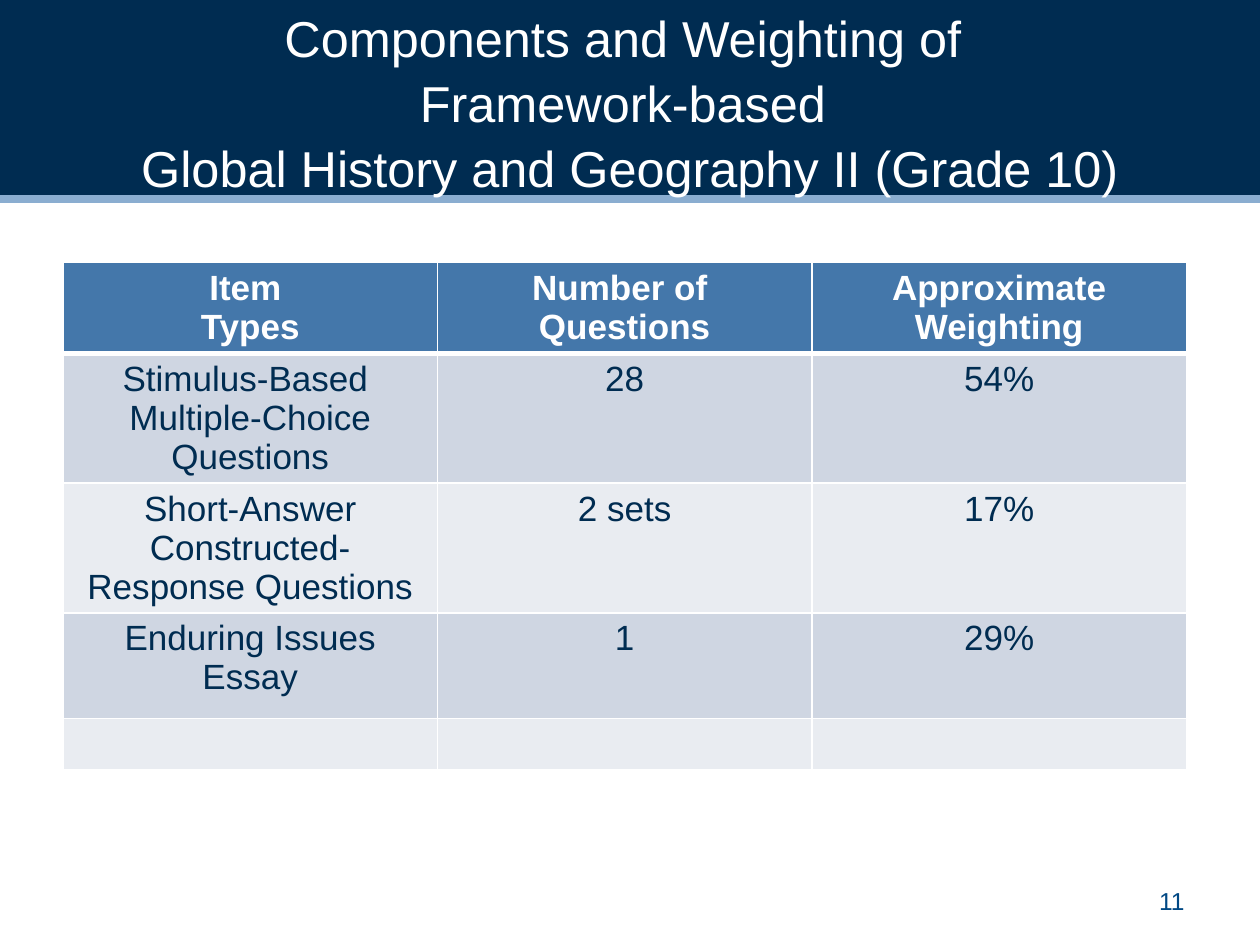
"""Build the slide on exam components and their weighting."""
import pptx
import pptx.dml.color
import pptx.enum.shapes
import pptx.enum.text
import pptx.oxml
import pptx.oxml.ns
import pptx.util

Pt = pptx.util.Pt
ALIGN = pptx.enum.text.PP_ALIGN
MIDDLE = pptx.enum.text.MSO_ANCHOR.MIDDLE


def color(value):
    return pptx.dml.color.RGBColor.from_string(value)


class SlideBuilder:
    font_name = "Arial"
    navy, white = "002C51", "FFFFFF"
    header_fill, row_fills = "4477AA", ("CFD6E2", "E9ECF1")

    def __init__(self, presentation):
        self.slide = presentation.slides.add_slide(presentation.slide_layouts[5])
        self.shapes = self.slide.shapes

    def style(self, paragraph, size, ink, align=ALIGN.CENTER, bold=False):
        paragraph.alignment = align
        font = paragraph.font
        font.name, font.size, font.bold = self.font_name, Pt(size), bold
        font.color.rgb = color(ink)

    def band(self, width, height):
        band = self.shapes.add_shape(
            pptx.enum.shapes.MSO_SHAPE.RECTANGLE, 0, 0, Pt(width), Pt(height))
        band.shadow.inherit = False
        band.fill.solid()
        band.fill.fore_color.rgb = color(self.navy)
        band.line.fill.background()

    def rule(self, y, width, ink, weight):
        rule = self.shapes.add_connector(
            pptx.enum.shapes.MSO_CONNECTOR.STRAIGHT, 0, Pt(y), Pt(width), Pt(y))
        rule.line.color.rgb = color(ink)
        rule.line.width = Pt(weight)
        rule.element.spPr.append(pptx.oxml.parse_xml(
            f"<a:effectLst {pptx.oxml.ns.nsdecls('a')}/>"))

    def title(self, text, left, top, width, height):
        title = self.shapes.title
        title.left, title.top = Pt(left), Pt(top)
        title.width, title.height = Pt(width), Pt(height)
        title.element.getparent().append(title.element)
        title.text_frame.vertical_anchor = MIDDLE
        title.text_frame.auto_size = pptx.enum.text.MSO_AUTO_SIZE.NONE
        heading = title.text_frame.paragraphs[0]
        heading.text = text
        heading.line_spacing = 1.07
        self.style(heading, 28.8, self.white)

    def borders(self, cell, weights):
        properties = cell._tc.get_or_add_tcPr()
        for side, weight in zip("LRTB", weights):
            properties.append(pptx.oxml.parse_xml(
                f'<a:ln{side} {pptx.oxml.ns.nsdecls("a")} w="{Pt(weight)}"><a:solidFill>'
                f'<a:srgbClr val="{self.white}"/></a:solidFill></a:ln{side}>'))

    def table(self, rows, left, top, column_width, row_heights):
        columns = len(rows[0])
        table = self.shapes.add_table(
            len(rows), columns, Pt(left), Pt(top),
            Pt(column_width * columns), Pt(sum(row_heights))).table
        for column in table.columns:
            column.width = Pt(column_width)
        for index, (entries, height) in enumerate(zip(rows, row_heights)):
            table.rows[index].height = Pt(height)
            is_header = index == 0
            fill = self.header_fill if is_header else self.row_fills[(index - 1) % 2]
            ink = self.white if is_header else self.navy
            weights = (1, 1, 3 if index == 1 else 1, 3 if is_header else 1)
            for cell, entry in zip(table.rows[index].cells, entries):
                self.borders(cell, weights)
                cell.fill.solid()
                cell.fill.fore_color.rgb = color(fill)
                if entry:
                    cell.text = entry
                    for paragraph in cell.text_frame.paragraphs:
                        self.style(paragraph, 20, ink, bold=is_header)

    def page_number(self, number, left, top, width, height):
        frame = self.shapes.add_textbox(
            Pt(left), Pt(top), Pt(width), Pt(height)).text_frame
        frame.word_wrap = True
        frame.vertical_anchor = MIDDLE
        frame.text = number
        self.style(frame.paragraphs[0], 14, "004884", ALIGN.RIGHT)


def main():
    presentation = pptx.Presentation()
    presentation.slide_width, presentation.slide_height = Pt(720), Pt(540)
    builder = SlideBuilder(presentation)
    builder.band(720, 113.8)
    builder.rule(113.8, 720, "8AADD0", 4.5)
    builder.title(
        "Components and Weighting of \nFramework-based \n"
        "Global History and Geography II (Grade 10)", 36, 12.2, 648, 90)
    components = [
        ("Item \nTypes", "Number of \nQuestions", "Approximate Weighting"),
        ("Stimulus-Based \nMultiple-Choice Questions", "28", "54%"),
        ("Short-Answer Constructed-Response Questions", "2 sets", "17%"),
        ("Enduring Issues Essay", "1", "29%"),
        ("", "", ""),
    ]
    builder.table(components, 36, 150, 214, (51.8, 74.2, 74.2, 60.4, 27.4))
    builder.page_number("11", 516, 500.4, 168, 28.8)
    presentation.save("out.pptx")


if __name__ == "__main__":
    main()
